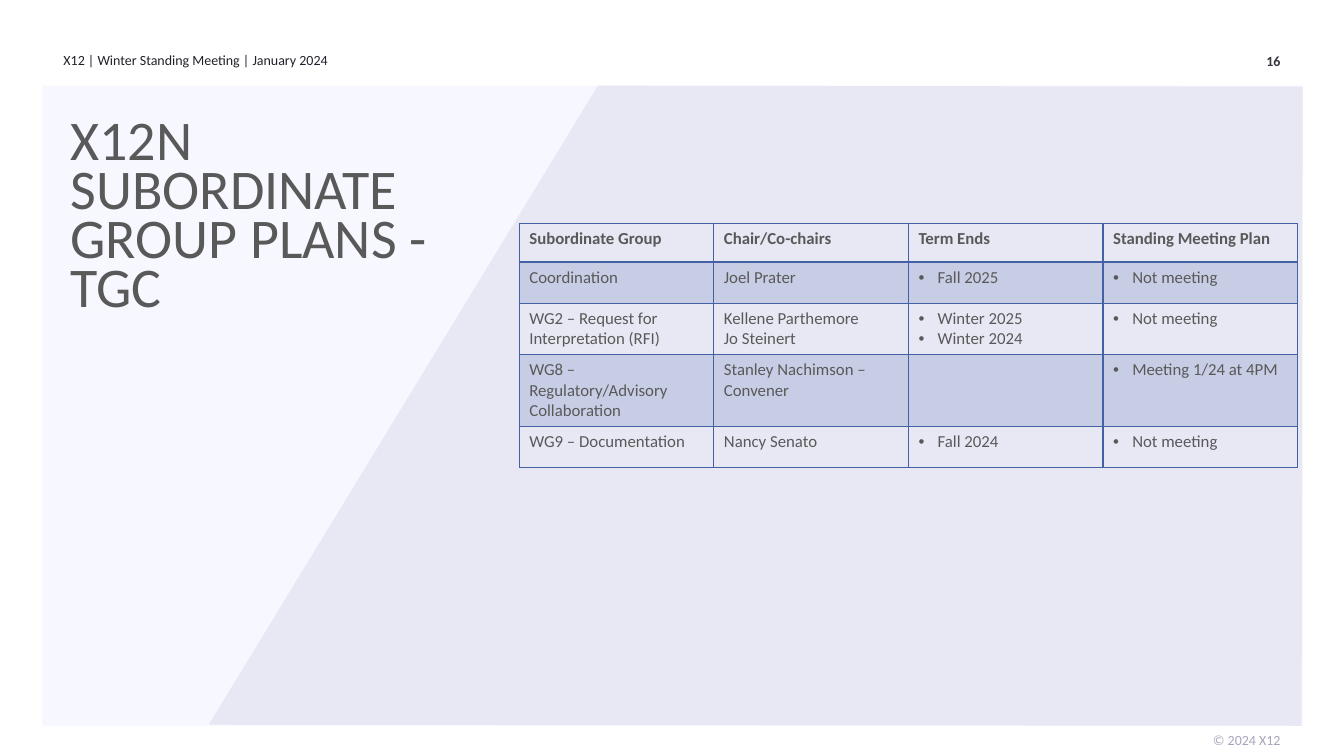
from lxml import etree
from pptx import Presentation
from pptx.dml.color import RGBColor
from pptx.enum import shapes, text
from pptx.oxml import ns
from pptx.util import Inches, Pt

FONT = "Calibri"
COLORS = {"panel": "F7F7FF", "slant": "E8E8F5", "header": "21212B", "number": "363640",
          "footer": "A6A6BA", "body": "595959", "accent": "4361A3"}
TITLE = "X12N SUBORDINATE GROUP PLANS - TGC"
LABELS = [
    ("X12 | Winter Standing Meeting | January 2024", (0.63, 0.51, 4.5, 0.25), "header", False, "LEFT"),
    ("16", (11.19, 0.52, 1.51, 0.25), "number", True, "RIGHT"),
    ("© 2024 X12", (11.19, 7.26, 1.51, 0.25), "footer", False, "RIGHT"),
]
PANEL = (0.42, 0.85, 12.5, 6.35)
SLANT = [(2.07, 7.19), (5.93, 0.85), (12.92, 0.86), (12.91, 7.2)]
ROWS = [
    (["Subordinate Group"], ["Chair/Co-chairs"], ["Term Ends"], ["Standing Meeting Plan"]),
    (["Coordination"], ["Joel Prater"], ["Fall 2025"], ["Not meeting"]),
    (["WG2 – Request for Interpretation (RFI)"], ["Kellene Parthemore", "Jo Steinert"],
     ["Winter 2025", "Winter 2024"], ["Not meeting"]),
    (["WG8 – Regulatory/Advisory Collaboration"], ["Stanley Nachimson – Convener"],
     [], ["Meeting 1/24 at 4PM"]),
    (["WG9 – Documentation"], ["Nancy Senato"], ["Fall 2024"], ["Not meeting"]),
]
ROW_HEIGHTS = [0.38, 0.41, 0.51, 0.71, 0.41]
COLUMN_WIDTH = 1.93
FIRST_BULLET_COLUMN = 2


def color(name):
    return RGBColor.from_string(COLORS[name])


def inches(values):
    return [Inches(value) for value in values]


def paint(shape, name):
    shape.shadow.inherit = False
    shape.fill.solid()
    shape.fill.fore_color.rgb = color(name)
    shape.line.fill.background()


def style(font, size, name, bold=False):
    font.name, font.size, font.bold = FONT, Pt(size), bold
    font.color.rgb = color(name)


def add_label(page, words, place, size, name, bold=False, align="LEFT"):
    frame = page.shapes.add_textbox(*inches(place)).text_frame
    frame.word_wrap = True
    frame.margin_left = frame.margin_right = frame.margin_top = frame.margin_bottom = 0
    para = frame.paragraphs[0]
    para.alignment = getattr(text.PP_ALIGN, align)
    span = para.add_run()
    span.text = words
    style(span.font, size, name, bold)
    return para


def add_bullet(para):
    properties = para._p.get_or_add_pPr()
    properties.set("marL", str(Inches(0.19)))
    properties.set("indent", str(-Inches(0.19)))
    font = etree.SubElement(properties, ns.qn("a:buFont"))
    font.set("typeface", "Arial")
    etree.SubElement(properties, ns.qn("a:buChar")).set("char", "•")


def add_borders(cell, widths):
    properties = cell._tc.get_or_add_tcPr()
    for index, (side, width) in enumerate(widths.items()):
        line = etree.Element(ns.qn(f"a:ln{side}"), w=str(Pt(width)))
        fill = etree.SubElement(line, ns.qn("a:solidFill"))
        etree.SubElement(fill, ns.qn("a:srgbClr")).set("val", COLORS["accent"])
        properties.insert(index, line)


def fill_cell(cell, lines, row, column):
    if row % 2:
        cell.fill.solid()
        cell.fill.fore_color.rgb = color("accent")
        tint = cell._tc.tcPr.find(".//" + ns.qn("a:srgbClr"))
        etree.SubElement(tint, ns.qn("a:alpha")).set("val", "20000")
    else:
        cell.fill.background()
    add_borders(cell, {"L": 1, "R": 1, "T": 2 if row == 1 else 1, "B": 2 if row == 0 else 1})
    frame = cell.text_frame
    frame.paragraphs[0].font.size = Pt(12)
    for index, words in enumerate(lines):
        para = frame.add_paragraph() if index else frame.paragraphs[0]
        if row and column >= FIRST_BULLET_COLUMN:
            add_bullet(para)
        span = para.add_run()
        span.text = words
        style(span.font, 12, "body", row == 0)


def add_plan_table(page):
    place = (5.15, 2.22, COLUMN_WIDTH * len(ROWS[0]), sum(ROW_HEIGHTS))
    table = page.shapes.add_table(len(ROWS), len(ROWS[0]), *inches(place)).table
    table.first_row = table.horz_banding = False
    for column in table.columns:
        column.width = Inches(COLUMN_WIDTH)
    for row, cells in enumerate(ROWS):
        table.rows[row].height = Inches(ROW_HEIGHTS[row])
        for column, lines in enumerate(cells):
            fill_cell(table.cell(row, column), lines, row, column)


def main():
    deck = Presentation()
    deck.slide_width, deck.slide_height = Inches(13.33), Inches(7.5)
    page = deck.slides.add_slide(deck.slide_layouts[6])

    paint(page.shapes.add_shape(shapes.MSO_SHAPE.RECTANGLE, *inches(PANEL)), "panel")
    for words, place, name, bold, align in LABELS:
        add_label(page, words, place, 10, name, bold, align)
    corners = [inches(corner) for corner in SLANT]
    outline = page.shapes.build_freeform(*corners[0])
    outline.add_line_segments(corners[1:], close=True)
    paint(outline.convert_to_shape(), "slant")

    title = add_label(page, TITLE, (0.7, 1.22, 3.69, 1.9), 40, "body")
    title.line_spacing = Pt(35)
    add_plan_table(page)
    deck.save("out.pptx")


if __name__ == "__main__":
    main()
